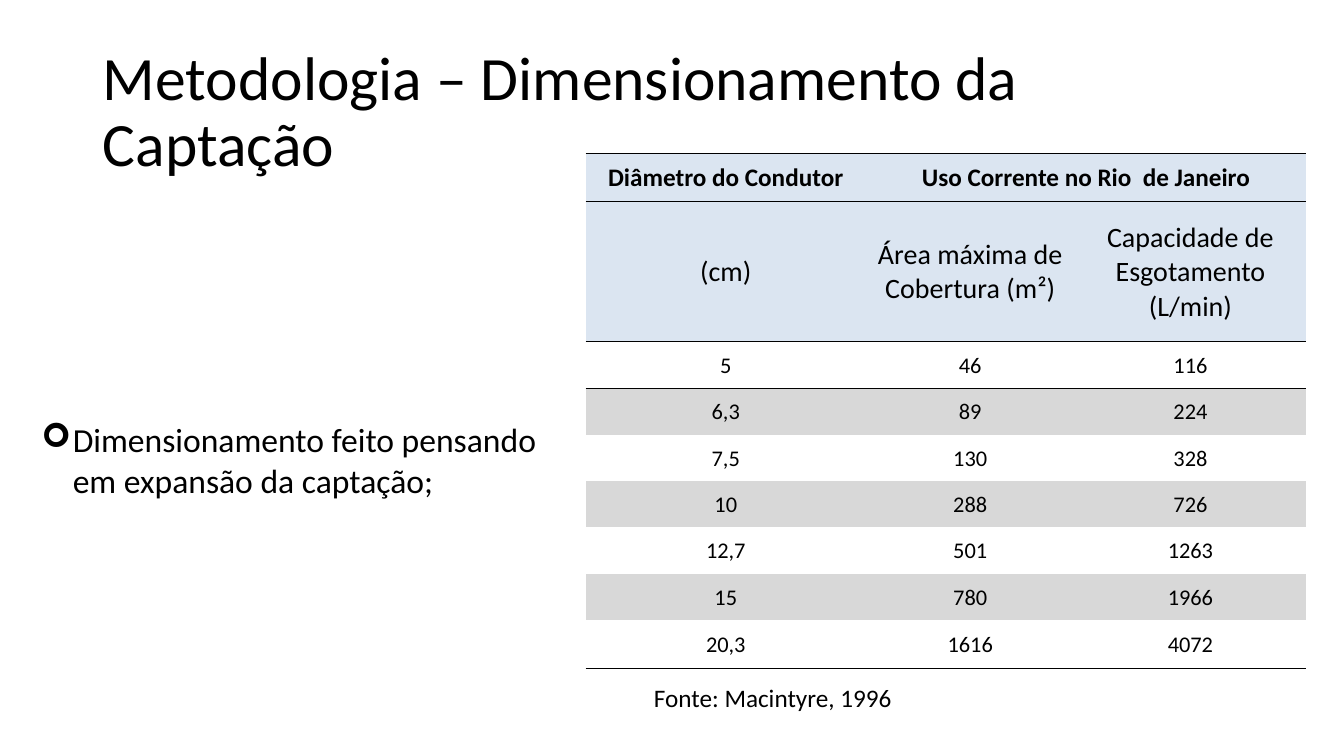
from dataclasses import dataclass

import lxml.etree
import pptx
import pptx.dml.color
import pptx.enum.text
import pptx.oxml.ns
import pptx.presentation
import pptx.shapes.base
import pptx.slide
import pptx.table
import pptx.text.text
import pptx.util

Cm = pptx.util.Cm
Align = pptx.enum.text.PP_ALIGN
Anchor = pptx.enum.text.MSO_ANCHOR
AutoSize = pptx.enum.text.MSO_AUTO_SIZE
qn = pptx.oxml.ns.qn


@dataclass(frozen=True)
class Theme:
    font: str = "Calibri"
    ink: str = "000000"
    header_fill: str = "DBE5F1"
    band_fill: str = "D8D8D8"
    title_size: int = 44
    list_size: int = 24
    unit_size: int = 20
    header_size: int = 18
    value_size: int = 16
    caption_size: int = 18
    thin_rule: float = 0.5
    rule: float = 1


@dataclass(frozen=True)
class Area:
    left: float
    top: float
    width: float
    height: float


@dataclass(frozen=True)
class RowStyle:
    height: float
    size: int
    bold: bool = False
    fill: str | None = None
    top_rule: float = 0
    bottom_rule: float = 0


THEME = Theme()
TITLE_AREA = Area(2.34, 1.02, 29.21, 3.68)
LIST_AREA = Area(0.79, 10.44, 13.41, 2.31)
TABLE_AREA = Area(14.76, 3.86, 18.16, 12.95)
CAPTION_AREA = Area(16.23, 17.07, 16.79, 1.02)
LIST_INDENT = Cm(0.79)
COLUMN_WIDTHS = (7.06, 5.26, 5.84)
NO_GRID_STYLE = "{2D5ABB26-0587-4C30-8999-92F81FD0307C}"

HEADINGS = [
    ("Diâmetro do Condutor", "Uso Corrente no Rio  de Janeiro", ""),
    ("(cm)", "Área máxima de Cobertura (m²)", "Capacidade de Esgotamento (L/min)"),
]
CAPACITIES = [
    ("5", "46", "116"),
    ("6,3", "89", "224"),
    ("7,5", "130", "328"),
    ("10", "288", "726"),
    ("12,7", "501", "1263"),
    ("15", "780", "1966"),
    ("20,3", "1616", "4072"),
]


def place(shape: pptx.shapes.base.BaseShape, area: Area) -> None:
    shape.left, shape.top = Cm(area.left), Cm(area.top)
    shape.width, shape.height = Cm(area.width), Cm(area.height)


def write(frame: pptx.text.text.TextFrame, text: str, size: int,
          align: Align = Align.LEFT, bold: bool = False) -> pptx.text.text._Paragraph:
    frame.text = text
    para = frame.paragraphs[0]
    para.alignment = align
    para.font.name = THEME.font
    para.font.size = pptx.util.Pt(size)
    para.font.bold = bold
    para.font.color.rgb = pptx.dml.color.RGBColor.from_string(THEME.ink)
    return para


def add_bullet(para: pptx.text.text._Paragraph, symbol: str) -> None:
    properties = para._p.get_or_add_pPr()
    properties.set("marL", str(LIST_INDENT))
    properties.set("indent", str(-LIST_INDENT))
    for tag, name, value in (("a:buFont", "typeface", "Wingdings"), ("a:buChar", "char", symbol)):
        # The default run properties must stay last
        bullet = lxml.etree.Element(qn(tag), {name: value})
        properties.find(qn("a:defRPr")).addprevious(bullet)


def add_rule(cell: pptx.table._Cell, side: str, width: float) -> None:
    if not width:
        return
    line = lxml.etree.SubElement(cell._tc.get_or_add_tcPr(), qn(f"a:ln{side}"),
                                 {"w": str(pptx.util.Pt(width))})
    fill = lxml.etree.SubElement(line, qn("a:solidFill"))
    lxml.etree.SubElement(fill, qn("a:srgbClr"), {"val": THEME.ink})


def fill_cell(cell: pptx.table._Cell, text: str, style: RowStyle) -> None:
    cell.margin_left = cell.margin_right = cell.margin_top = Cm(0.03)
    cell.margin_bottom = 0
    cell.vertical_anchor = Anchor.MIDDLE
    write(cell.text_frame, text, style.size, Align.CENTER, style.bold)
    add_rule(cell, "T", style.top_rule)
    add_rule(cell, "B", style.bottom_rule)
    if style.fill:
        cell.fill.solid()
        cell.fill.fore_color.rgb = pptx.dml.color.RGBColor.from_string(style.fill)
    else:
        cell.fill.background()


def row_styles() -> list[RowStyle]:
    styles = [
        RowStyle(1.22, THEME.header_size, True, THEME.header_fill, THEME.thin_rule, THEME.rule),
        RowStyle(3.53, THEME.unit_size, False, THEME.header_fill, THEME.rule, THEME.rule),
    ]
    last = len(CAPACITIES) - 1
    for index in range(len(CAPACITIES)):
        styles.append(RowStyle(
            height=1.22 if index == last else 1.17,
            size=THEME.value_size,
            fill=THEME.band_fill if index % 2 else None,
            top_rule=THEME.rule if index == 0 else 0,
            bottom_rule=THEME.rule if index == last else 0,
        ))
    return styles


def add_capacity_table(page: pptx.slide.Slide) -> None:
    rows = HEADINGS + CAPACITIES
    area = TABLE_AREA
    table = page.shapes.add_table(len(rows), len(COLUMN_WIDTHS), Cm(area.left), Cm(area.top),
                                  Cm(area.width), Cm(area.height)).table
    table._tbl.tblPr.find(qn("a:tableStyleId")).text = NO_GRID_STYLE
    table.first_row = table.horz_banding = False
    for column, width in zip(table.columns, COLUMN_WIDTHS):
        column.width = Cm(width)
    for row, texts, style in zip(table.rows, rows, row_styles()):
        row.height = Cm(style.height)
        for cell, text in zip(row.cells, texts):
            fill_cell(cell, text, style)
    table.cell(0, 1).merge(table.cell(0, 2))


def build_page(deck: pptx.presentation.Presentation) -> None:
    page = deck.slides.add_slide(deck.slide_layouts[1])

    # Title
    title = page.shapes.title
    place(title, TITLE_AREA)
    title.text_frame.vertical_anchor = Anchor.MIDDLE
    title.text_frame.auto_size = AutoSize.NONE
    para = write(title.text_frame, "Metodologia – Dimensionamento da Captação", THEME.title_size)
    para.line_spacing = 0.9

    # Bulleted list
    body = page.placeholders[1]
    place(body, LIST_AREA)
    body.text_frame.auto_size = AutoSize.SHAPE_TO_FIT_TEXT
    para = write(body.text_frame, "Dimensionamento feito pensando em expansão da captação;",
                 THEME.list_size)
    para.space_before = pptx.util.Pt(0)
    add_bullet(para, "➢")

    # Table and its source
    add_capacity_table(page)
    caption = page.shapes.add_textbox(0, 0, 0, 0)
    place(caption, CAPTION_AREA)
    caption.text_frame.word_wrap = True
    caption.text_frame.auto_size = AutoSize.SHAPE_TO_FIT_TEXT
    write(caption.text_frame, "Fonte: Macintyre, 1996", THEME.caption_size)


def main() -> None:
    deck = pptx.Presentation()
    deck.slide_width, deck.slide_height = Cm(33.87), Cm(19.05)
    build_page(deck)
    deck.save("out.pptx")


if __name__ == "__main__":
    main()
